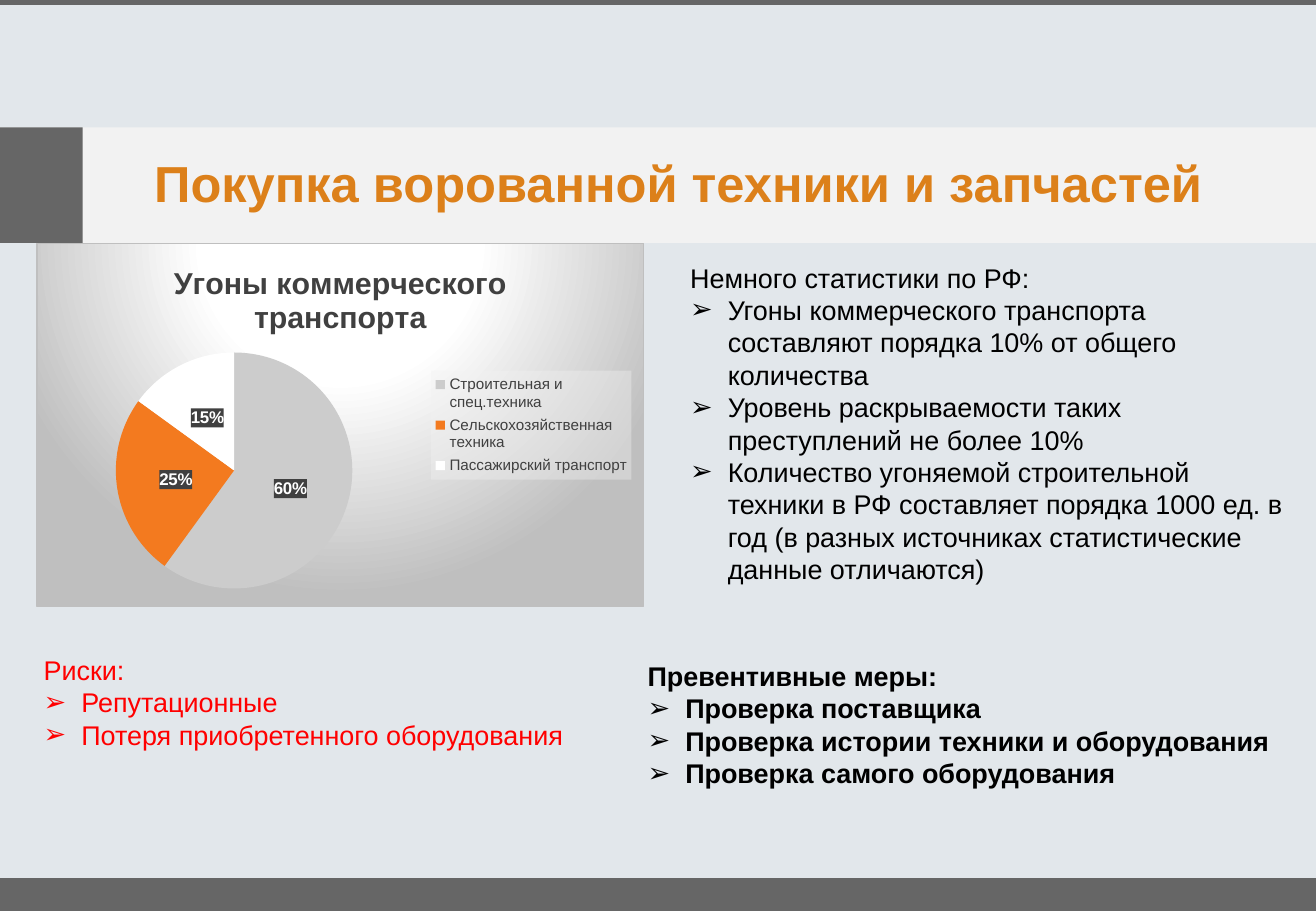
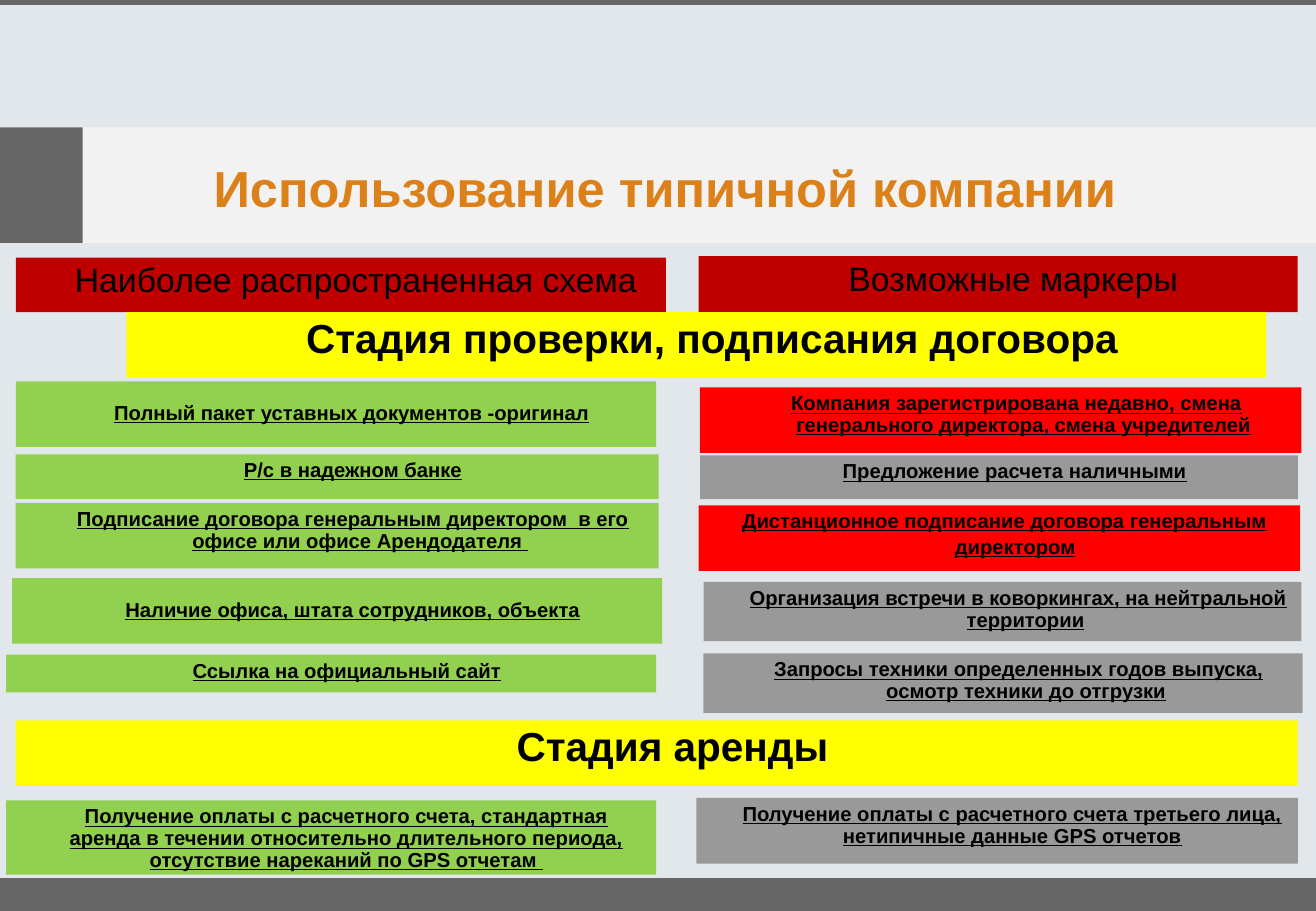
from dataclasses import dataclass

from pptx import Presentation
from pptx.chart.data import CategoryChartData
from pptx.dml.color import RGBColor
from pptx.enum.chart import XL_CHART_TYPE as ChartType
from pptx.enum.chart import XL_LABEL_POSITION as LabelPosition
from pptx.enum.chart import XL_LEGEND_POSITION as LegendPosition
from pptx.enum.shapes import MSO_SHAPE as Preset
from pptx.enum.text import MSO_ANCHOR as Anchor
from pptx.enum.text import MSO_AUTO_SIZE as AutoSize
from pptx.enum.text import PP_ALIGN as Align
from pptx.oxml import parse_xml
from pptx.oxml.ns import nsdecls, qn
from pptx.util import Inches, Pt

FONT = "Arial"
WIDTH, HEIGHT = Inches(10.83), Inches(7.5)
COLORS = {
    "page": "E2E7EB", "dark": "666666", "band": "F2F2F2", "title": "DC801A",
    "text": "000000", "white": "FFFFFF", "silver": "CCCCCC", "orange": "F37A1F",
    "chart text": "404040", "chart edge": "BFBFBF", "header": "C00000",
    "stage": "FFFF00", "normal": "92D050", "warning": "999999", "alarm": "FF0000",
}


@dataclass(frozen=True)
class Area:
    """A rectangle in percent of the slide's width and height."""
    left: float
    top: float
    width: float
    height: float

    def lengths(self) -> tuple[int, int, int, int]:
        return (int(WIDTH * self.left / 100), int(HEIGHT * self.top / 100),
                int(WIDTH * self.width / 100), int(HEIGHT * self.height / 100))


@dataclass(frozen=True)
class BulletList:
    placeholder: int
    area: Area
    heading: str
    items: tuple[str, ...]
    color: str = "text"
    bold: bool = False


@dataclass(frozen=True)
class CardStyle:
    size: int = 12
    bold: bool = True
    underline: bool = True
    indent: tuple[float, float] = (0.38, -0.12)


@dataclass(frozen=True)
class Card:
    area: Area
    fill: str
    text: str
    style: CardStyle = CardStyle()
    anchor: Anchor = Anchor.TOP
    first_align: Align = Align.CENTER


HEADER = CardStyle(20, False, False, (0.25, 0))
STAGE = CardStyle(24, True, False)
FLUSH = CardStyle(indent=(0.25, 0))

BANDS = (
    (Area(0, 96.4, 100, 3.6), "dark"),
    (Area(0, 14, 100, 12.67), "band"),
    (Area(0, 14, 6.28, 12.67), "dark"),
    (Area(0, 0, 100, 0.53), "dark"),
)

LISTS = (
    BulletList(1, Area(51.52, 28, 47.09, 40.4), "Немного статистики по РФ:", (
        "Угоны коммерческого транспорта составляют порядка 10% от общего количества",
        "Уровень раскрываемости таких преступлений не более 10%",
        "Количество угоняемой строительной техники в РФ составляет порядка 1000 ед. в год "
        "(в разных источниках статистические данные отличаются)")),
    BulletList(2, Area(48.29, 71.73, 50.32, 15.73), "Превентивные меры:", (
        "Проверка поставщика", "Проверка истории техники и оборудования",
        "Проверка самого оборудования"), bold=True),
    BulletList(3, Area(2.4, 71.07, 49.22, 15.2), "Риски:", (
        "Репутационные", "Потеря приобретенного оборудования"), color="alarm"),
)

THEFT_SHARES = (
    ("Строительная и спец.техника", 60, "silver"),
    ("Сельскохозяйственная техника", 25, "orange"),
    ("Пассажирский транспорт", 15, "white"),
)

CARDS = (
    # Column headers and stages
    Card(Area(1.2, 28.27, 49.4, 6), "header", "Наиболее распространенная схема", HEADER),
    Card(Area(53.09, 28.13, 45.52, 6.13), "header", "Возможные маркеры", HEADER),
    Card(Area(9.6, 34.27, 86.61, 7.2), "stage", "Стадия проверки, подписания договора", STAGE),
    Card(Area(1.2, 79.07, 97.41, 7.2), "stage", "Стадия аренды", STAGE),
    # Usual scheme
    Card(Area(1.2, 41.87, 48.66, 7.2), "normal",
         "Полный пакет уставных документов -оригинал", anchor=Anchor.MIDDLE),
    Card(Area(1.2, 49.87, 48.85, 4.93), "normal", "Р/с в надежном банке"),
    Card(Area(1.2, 55.2, 48.85, 7.2), "normal",
         "Подписание договора генеральным директором  в его офисе или офисе Арендодателя "),
    Card(Area(0.92, 63.47, 49.4, 7.2), "normal",
         "Наличие офиса, штата сотрудников, объекта", anchor=Anchor.MIDDLE),
    Card(Area(0.46, 71.87, 49.4, 4.13), "normal", "Ссылка на официальный сайт"),
    Card(Area(0.46, 87.87, 49.4, 8.13), "normal",
         "Получение оплаты с расчетного счета, стандартная аренда в течении относительно "
         "длительного периода, отсутствие нареканий по GPS отчетам ", FLUSH),
    # Possible markers
    Card(Area(53.19, 42.53, 45.71, 7.2), "alarm",
         "Компания зарегистрирована недавно, смена генерального директора, смена учредителей"),
    Card(Area(53.19, 50, 45.43, 4.8), "warning", "Предложение расчета наличными"),
    Card(Area(53.09, 55.47, 45.71, 7.2), "alarm",
         "Дистанционное подписание договора генеральным\nдиректором", first_align=Align.LEFT),
    Card(Area(53.46, 63.87, 45.43, 6.53), "warning",
         "Организация встречи в коворкингах, на нейтральной территории"),
    Card(Area(53.46, 71.73, 45.52, 6.53), "warning",
         "Запросы техники определенных годов выпуска, осмотр техники до отгрузки"),
    Card(Area(52.91, 87.6, 45.71, 7.2), "warning",
         "Получение оплаты с расчетного счета третьего лица, нетипичные данные GPS отчетов",
         FLUSH),
)


def rgb(name: str) -> RGBColor:
    return RGBColor.from_string(COLORS[name])


def set_font(font, size: int, color: str, bold: bool = False, underline: bool = False) -> None:
    font.name, font.size, font.bold, font.underline = FONT, Pt(size), bold, underline
    font.color.rgb = rgb(color)


def set_indent(para, left: float, first: float) -> None:
    properties = para._p.get_or_add_pPr()
    properties.set("marL", str(Inches(left)))
    properties.set("indent", str(Inches(first)))


def move(shape, area: Area) -> None:
    shape.left, shape.top, shape.width, shape.height = area.lengths()


def add_rectangle(page, area: Area, fill: str):
    box = page.shapes.add_shape(Preset.RECTANGLE, *area.lengths())
    box.shadow.inherit = False
    box.fill.solid()
    box.fill.fore_color.rgb = rgb(fill)
    box.line.fill.background()
    return box


def style_master(deck, page) -> None:
    """Give the master its background and bands, drawn by way of a page."""
    master = deck.slide_master
    master.background.fill.solid()
    master.background.fill.fore_color.rgb = rgb("page")
    for area, fill in BANDS:
        master.shapes.element.append(add_rectangle(page, area, fill).element)


def set_title(page, text: str, left: float, top: float) -> None:
    title = page.shapes.title
    move(title, Area(left, top, 90.58, 16.8))
    frame = title.text_frame
    frame.text = text
    frame.auto_size, frame.word_wrap = AutoSize.NONE, False
    frame.vertical_anchor = Anchor.MIDDLE
    para = frame.paragraphs[0]
    para.alignment, para.line_spacing = Align.CENTER, 0.8
    set_font(para.font, 30, "title", bold=True)


def fill_list(page, content: BulletList) -> None:
    body = page.placeholders[content.placeholder]
    move(body, content.area)
    frame = body.text_frame
    frame.text = "\n".join((content.heading, *content.items))
    frame.auto_size, frame.word_wrap = AutoSize.NONE, True
    frame.vertical_anchor = Anchor.TOP
    for index, para in enumerate(frame.paragraphs):
        para.space_before = Pt(0)
        properties = para._p.get_or_add_pPr()
        if index:
            set_indent(para, 0.31, -0.31)
            bullets = (f'<a:buFont {nsdecls("a")} typeface="{FONT}"/>',
                       f'<a:buChar {nsdecls("a")} char="➢"/>')
        else:
            set_indent(para, 0, 0)
            bullets = (f'<a:buNone {nsdecls("a")}/>',)
        for bullet in bullets:
            properties.append(parse_xml(bullet))
        set_font(para.font, 16, content.color, content.bold)


def chart_layout(x: float, y: float, width: float, height: float, inner: bool = False):
    target = '<c:layoutTarget val="inner"/>' if inner else ""
    return parse_xml(
        f'<c:layout {nsdecls("c")}><c:manualLayout>{target}'
        '<c:xMode val="edge"/><c:yMode val="edge"/>'
        f'<c:x val="{x}"/><c:y val="{y}"/><c:w val="{width}"/><c:h val="{height}"/>'
        '</c:manualLayout></c:layout>')


def chart_fill(color: str, opacity: int):
    return parse_xml(
        f'<c:spPr {nsdecls("c", "a")}><a:solidFill><a:srgbClr val="{COLORS[color]}">'
        f'<a:alpha val="{opacity * 1000}"/></a:srgbClr></a:solidFill></c:spPr>')


def chart_background():
    white, edge = COLORS["white"], COLORS["chart edge"]
    stops = "".join(f'<a:gs pos="{share * 1000}"><a:srgbClr val="{color}"/></a:gs>'
                    for share, color in ((0, white), (39, white), (100, edge)))
    return parse_xml(
        f'<c:spPr {nsdecls("c", "a")}><a:gradFill><a:gsLst>{stops}</a:gsLst>'
        '<a:path path="circle"><a:fillToRect l="50000" t="-80000" r="50000" b="180000"/>'
        f'</a:path></a:gradFill><a:ln w="{Pt(0.75)}"><a:solidFill><a:srgbClr val="{edge}"/>'
        '</a:solidFill></a:ln></c:spPr>')


def add_theft_chart(page, area: Area) -> None:
    data = CategoryChartData()
    data.categories = [name for name, _, _ in THEFT_SHARES]
    data.add_series("Series 1", [value for _, value, _ in THEFT_SHARES])
    chart = page.shapes.add_chart(ChartType.PIE, *area.lengths(), data).chart
    set_font(chart.font, 10, "text")

    # Title
    chart.has_title = True
    title = chart.chart_title
    title.include_in_layout = False
    title.text_frame.text = "Угоны коммерческого транспорта"
    set_font(title.text_frame.paragraphs[0].font, 18, "chart text", bold=True)

    # Slices and labels
    plot = chart.plots[0]
    plot.vary_by_categories = True
    for index, (_, _, color) in enumerate(THEFT_SHARES):
        fill = plot.series[0].points[index].format.fill
        fill.solid()
        fill.fore_color.rgb = rgb(color)
    plot.has_data_labels = True
    labels = plot.data_labels
    labels.show_value, labels.show_percentage = False, True
    labels.number_format, labels.number_format_is_linked = "0%", False
    labels.position = LabelPosition.CENTER
    set_font(labels.font, 10, "white", bold=True)
    labels._element.find(qn("c:numFmt")).addnext(chart_fill("chart text", 90))

    # Legend
    chart.has_legend = True
    legend = chart.legend
    legend.position, legend.include_in_layout = LegendPosition.RIGHT, False
    set_font(legend.font, 9, "chart text")
    overlay = legend._element.find(qn("c:overlay"))
    overlay.addprevious(chart_layout(0.65, 0.35, 0.33, 0.3))
    overlay.addnext(chart_fill("band", 39))

    # Plot place and background
    body = chart.element.find(qn("c:chart"))
    plot_area = body.find(qn("c:plotArea"))
    for layout in plot_area.findall(qn("c:layout")):
        plot_area.remove(layout)
    plot_area.insert(0, chart_layout(0.13, 0.3, 0.39, 0.65, inner=True))
    body.addnext(chart_background())


def add_card(page, card: Card) -> None:
    box = add_rectangle(page, card.area, card.fill)
    style, frame = card.style, box.text_frame
    frame.text = card.text
    frame.word_wrap, frame.vertical_anchor = True, card.anchor
    for index, para in enumerate(frame.paragraphs):
        para.alignment = Align.CENTER if index else card.first_align
        para.line_spacing = 0.9
        para.space_before = Pt(style.size * 0.2 if index else 0)
        set_indent(para, *style.indent)
        set_font(para.font, style.size, "text", style.bold, style.underline)


def main() -> None:
    deck = Presentation()
    deck.slide_width, deck.slide_height = WIDTH, HEIGHT

    # Stolen machinery
    page = deck.slides.add_slide(deck.slide_layouts.get_by_name("Comparison"))
    style_master(deck, page)
    set_title(page, "Покупка ворованной техники и запчастей", 6.28, 12.27)
    for content in LISTS:
        fill_list(page, content)
    spare = page.placeholders[4].element
    spare.getparent().remove(spare)
    add_theft_chart(page, Area(2.77, 26.67, 46.17, 40))

    # Typical company
    page = deck.slides.add_slide(deck.slide_layouts.get_by_name("Title Only"))
    set_title(page, "Использование типичной компании", 5.26, 12.8)
    for card in CARDS:
        add_card(page, card)

    deck.save("out.pptx")


if __name__ == "__main__":
    main()
